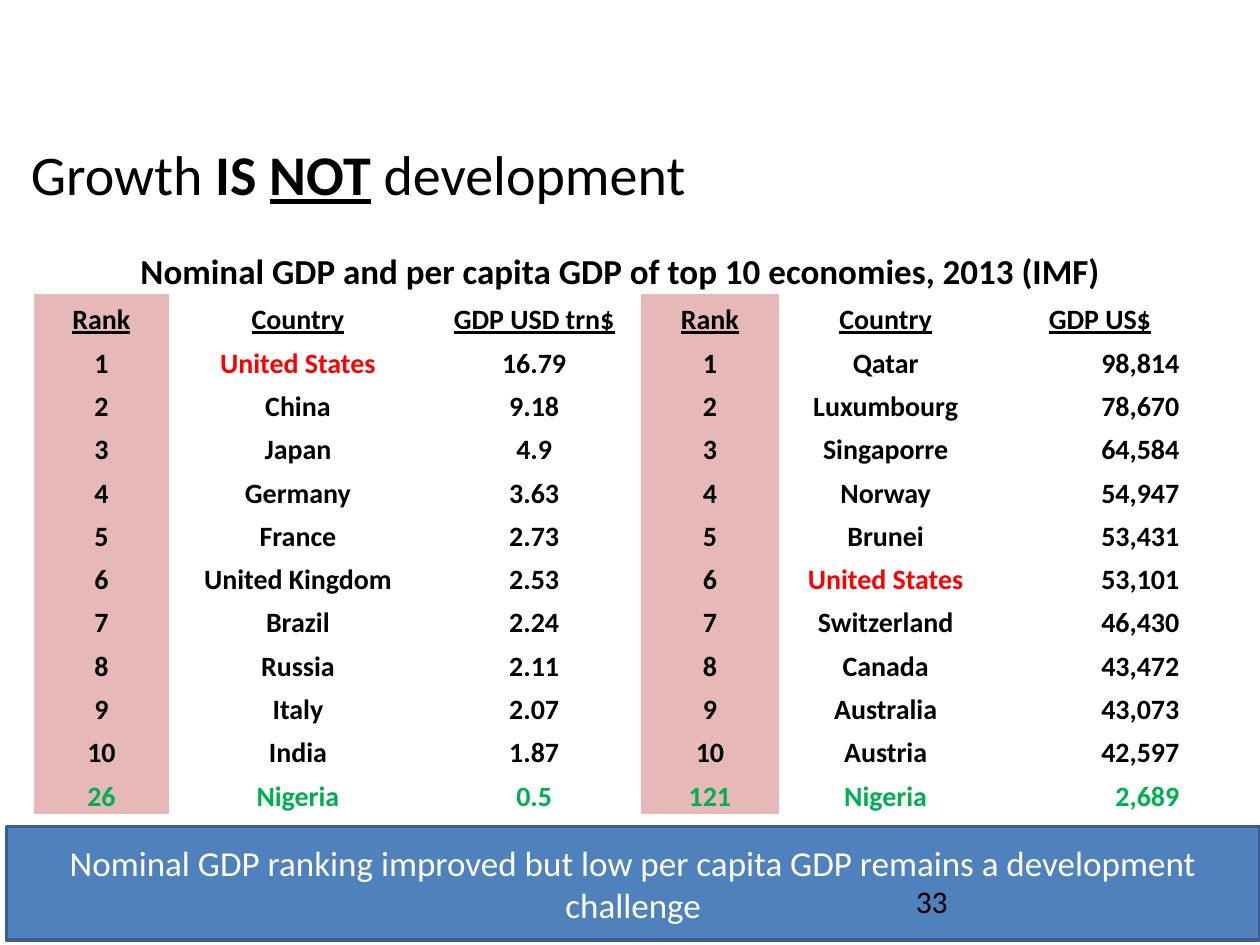
from pptx import Presentation
from pptx.dml.color import RGBColor
from pptx.enum.shapes import MSO_SHAPE as Shape
from pptx.enum.text import MSO_ANCHOR as Anchor, PP_ALIGN as Align
from pptx.oxml.ns import qn
from pptx.util import Inches, Pt

BLACK, WHITE, RED, GREEN = "000000", "FFFFFF", "FF0000", "00B050"
PINK, BLUE, NAVY = "E6B9B8", "4F81BD", "3A5F8C"
NO_STYLE = "{2D5ABB26-0587-4C30-8999-92F81FD0307C}"

TITLE = [
    ("Growth ", {}),
    ("IS ", {"bold": True}),
    ("NOT", {"bold": True, "underline": True}),
    (" development", {}),
]
CAPTION = "Nominal GDP and per capita GDP of top 10 economies, 2013 (IMF)"
HEADINGS = ("Rank", "Country", "GDP USD trn$", "Rank", "Country", "GDP US$")
ROWS = [
    ("1", "United States", "16.79", "1", "Qatar", "98,814"),
    ("2", "China", "9.18", "2", "Luxumbourg", "78,670"),
    ("3", "Japan", "4.9", "3", "Singaporre", "64,584"),
    ("4", "Germany", "3.63", "4", "Norway", "54,947"),
    ("5", "France", "2.73", "5", "Brunei", "53,431"),
    ("6", "United Kingdom", "2.53", "6", "United States", "53,101"),
    ("7", "Brazil", "2.24", "7", "Switzerland", "46,430"),
    ("8", "Russia", "2.11", "8", "Canada", "43,472"),
    ("9", "Italy", "2.07", "9", "Australia", "43,073"),
    ("10", "India", "1.87", "10", "Austria", "42,597"),
    ("26", "Nigeria", "0.5", "121", "Nigeria", "2,689"),
]
COLUMN_WIDTHS = (1.07, 2.05, 1.7, 1.09, 1.7, 1.7)
RANK_COLUMNS = (0, 3)
LAST_COLUMN = len(HEADINGS) - 1
MESSAGE = "Nominal GDP ranking improved but low per capita GDP remains a development challenge"
PAGE_NUMBER = "33"


def rgb(value):
    """Turn a hex string into a colour."""
    return RGBColor.from_string(value)


def write(frame, spans, size, color=BLACK, align=Align.CENTER):
    """Write one paragraph of formatted spans into a text frame."""
    frame.word_wrap = True
    para = frame.paragraphs[0]
    para.alignment = align
    for text, look in spans:
        span = para.add_run()
        span.text = text
        span.font.color.rgb = rgb(color)
        for name, value in {"name": "Calibri", "size": Pt(size), **look}.items():
            setattr(span.font, name, value)


def add_text(page, place, spans, size, align):
    """Add a text box at the given place."""
    box = page.shapes.add_textbox(*map(Inches, place))
    write(box.text_frame, spans, size, align=align)


def fill_cell(cell, text, size=16, color=BLACK, fill=None, underline=False,
              align=Align.CENTER, right=0):
    """Write a bold table cell and give it a fill."""
    margins = {"margin_left": 0, "margin_top": 0, "margin_bottom": 0,
               "margin_right": Inches(right), "vertical_anchor": Anchor.BOTTOM}
    for name, value in margins.items():
        setattr(cell, name, value)
    if fill:
        cell.fill.solid()
        cell.fill.fore_color.rgb = rgb(fill)
    else:
        cell.fill.background()
    write(cell.text_frame, [(text, {"bold": True, "underline": underline})],
          size, color, align)


def add_ranking(page):
    """Add the table with both GDP rankings."""
    frame = page.shapes.add_table(
        len(ROWS) + 2, len(HEADINGS),
        *map(Inches, (0.27, 1.99, sum(COLUMN_WIDTHS), 4.47)))
    table = frame.table
    table.first_row = table.horz_banding = False
    next(frame.element.iter(qn("a:tableStyleId"))).text = NO_STYLE
    for column, width in zip(table.columns, COLUMN_WIDTHS):
        column.width = Inches(width)

    table.cell(0, 0).merge(table.cell(0, LAST_COLUMN))
    fill_cell(table.cell(0, 0), CAPTION, size=20)
    for row, texts in enumerate([HEADINGS, *ROWS], start=1):
        heading = texts is HEADINGS
        row_color = GREEN if "Nigeria" in texts else BLACK
        for column, text in enumerate(texts):
            figure = column == LAST_COLUMN and not heading
            fill_cell(
                table.cell(row, column), text,
                color=RED if text == "United States" else row_color,
                fill=PINK if column in RANK_COLUMNS else None,
                underline=heading,
                align=Align.RIGHT if figure else Align.CENTER,
                right=0.22 if figure else 0)


def add_banner(page):
    """Add the blue message bar at the foot of the slide."""
    banner = page.shapes.add_shape(Shape.RECTANGLE, *map(Inches, (0.05, 6.56, 9.95, 0.9)))
    banner.shadow.inherit = False
    banner.fill.solid()
    banner.fill.fore_color.rgb = rgb(BLUE)
    banner.line.color.rgb = rgb(NAVY)
    banner.line.width = Pt(2)
    banner.text_frame.vertical_anchor = Anchor.MIDDLE
    write(banner.text_frame, [(MESSAGE, {})], 20, WHITE)


def main():
    """Build the slide and save it."""
    deck = Presentation()
    deck.slide_width, deck.slide_height = Inches(10), Inches(7.5)
    page = deck.slides.add_slide(deck.slide_layouts[6])
    add_ranking(page)
    add_banner(page)
    add_text(page, (0, 1.06, 5.54, 0.75), TITLE, 32, Align.RIGHT)
    add_text(page, (7.17, 6.95, 2.33, 0.4), [(PAGE_NUMBER, {})], 18, Align.LEFT)
    deck.save("out.pptx")


if __name__ == "__main__":
    main()
